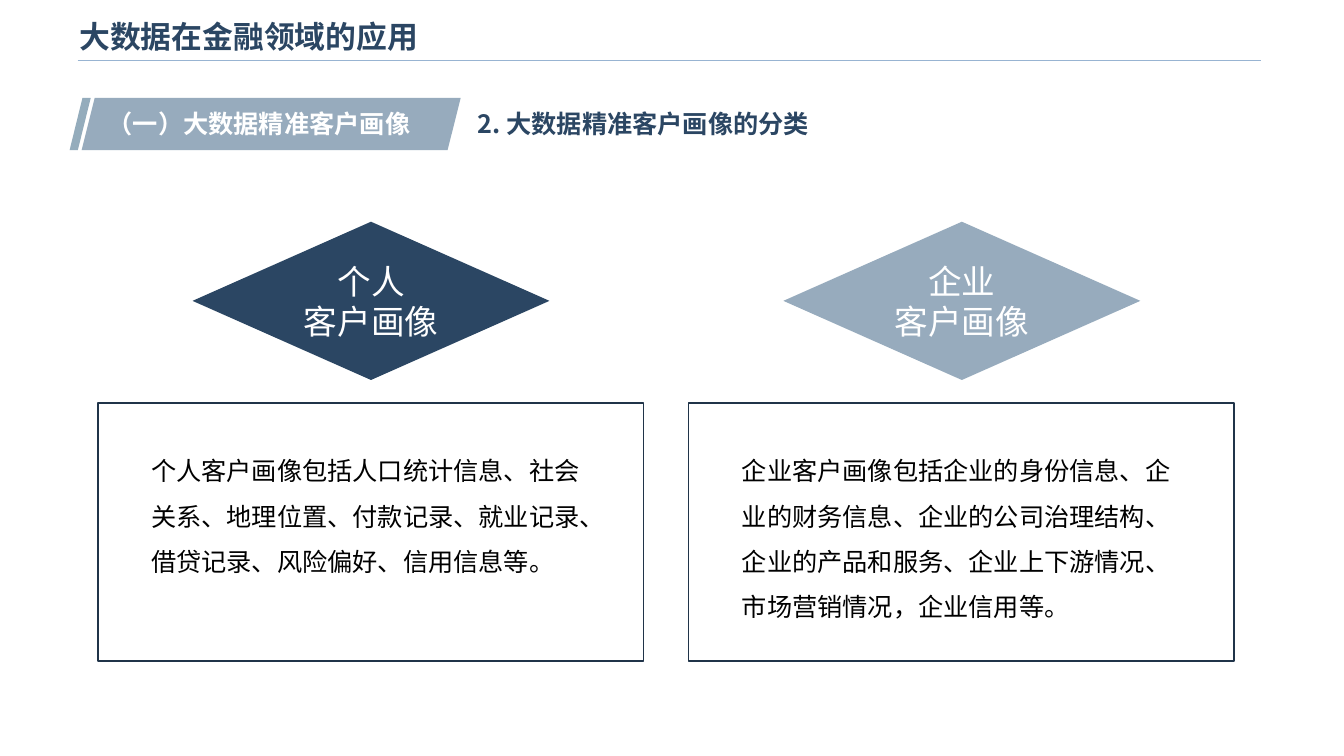
import pptx
import pptx.util
import pptx.dml.color
import pptx.enum.shapes
import pptx.enum.text
import pptx.oxml
import pptx.oxml.ns
import lxml.etree

PX = 9144
KIND = pptx.enum.shapes.MSO_SHAPE
ALIGN = pptx.enum.text.PP_ALIGN
MID = pptx.enum.text.MSO_ANCHOR.MIDDLE
TOP = pptx.enum.text.MSO_ANCHOR.TOP
RGB = pptx.dml.color.RGBColor.from_string
QN = pptx.oxml.ns.qn

theme = {
    "navy": RGB("2B4663"), "steel": RGB("97ABBD"), "slash": RGB("94ACBC"),
    "rule": RGB("98B4D2"), "edge": RGB("203449"),
    "white": RGB("FFFFFF"), "black": RGB("000000"),
    "title": 22, "head": 18, "label": 24, "body": 18,
    "latin": "Arial", "asian": "Noto Sans CJK SC",
}

deck = pptx.Presentation()
deck.slide_width = 1333 * PX
deck.slide_height = 750 * PX
slide = deck.slides.add_slide(deck.slide_layouts[6])


def draw(kind, area, fill=None, line=None):
    shape = slide.shapes.add_shape(kind, *[n * PX for n in area])
    shape.shadow.inherit = False
    if fill:
        shape.fill.solid()
        shape.fill.fore_color.rgb = theme[fill]
    else:
        shape.fill.background()
    if line:
        shape.line.color.rgb = theme[line]
        shape.line.width = pptx.util.Pt(1)
    else:
        shape.line.fill.background()
    return shape


def write(area, lines, size, color, face="latin", bold=False, align=ALIGN.LEFT, gap=1.0, anchor=TOP):
    frame = slide.shapes.add_textbox(*[n * PX for n in area]).text_frame
    frame.word_wrap = True
    frame.vertical_anchor = anchor
    look = {"size": pptx.util.Pt(theme[size]), "name": theme[face], "bold": bold}
    for i, line in enumerate(lines):
        para = frame.add_paragraph() if i else frame.paragraphs[0]
        para.alignment = align
        para.line_spacing = gap
        run = para.add_run()
        run.text = line
        for key, value in look.items():
            setattr(run.font, key, value)
        run.font.color.rgb = theme[color]
        asian = lxml.etree.SubElement(run._r.get_or_add_rPr(), QN("a:ea"))
        asian.set("typeface", theme["asian"])


rule = slide.shapes.add_connector(
    pptx.enum.shapes.MSO_CONNECTOR.STRAIGHT, 77 * PX, 60 * PX, 1251 * PX, 60 * PX)
rule.line.color.rgb = theme["rule"]
rule.line.width = pptx.util.Pt(1)
lxml.etree.SubElement(rule._element.spPr, QN("a:effectLst"))

write((69, 9, 1071, 53), ["大数据在金融领域的应用"], "title", "navy", bold=True, anchor=MID)

for left, width, slant, fill in [(69, 21, 0.61, "slash"), (81, 376, 0.25, "steel")]:
    draw(KIND.PARALLELOGRAM, (left, 97, width, 52), fill).adjustments[0] = slant

heads = [
    (97, 369, "（一）大数据精准客户画像", "white"),
    (464, 380, "2. 大数据精准客户画像的分类", "navy"),
]
for left, width, text, color in heads:
    write((left, 103, width, 40), [text], "head", color, "asian", True)

cards = [
    ("个人", "navy", 146,
     "个人客户画像包括人口统计信息、社会关系、地理位置、付款记录、就业记录、借贷记录、风险偏好、信用信息等。"),
    ("企业", "steel", 192,
     "企业客户画像包括企业的身份信息、企业的财务信息、企业的公司治理结构、企业的产品和服务、企业上下游情况、市场营销情况，企业信用等。"),
]
for i, (name, fill, height, text) in enumerate(cards):
    left = 97 + 586 * i
    draw(KIND.RECTANGLE, (left, 400, 541, 256), line="edge")
    draw(KIND.DIAMOND, (left + 94, 220, 354, 157), fill)
    write((left + 162, 254, 218, 91), [name, "客户画像"], "label", "white", align=ALIGN.CENTER)
    write((left + 43, 432, 455, height), [text], "body", "black", gap=1.5)

deck.save("out.pptx")
